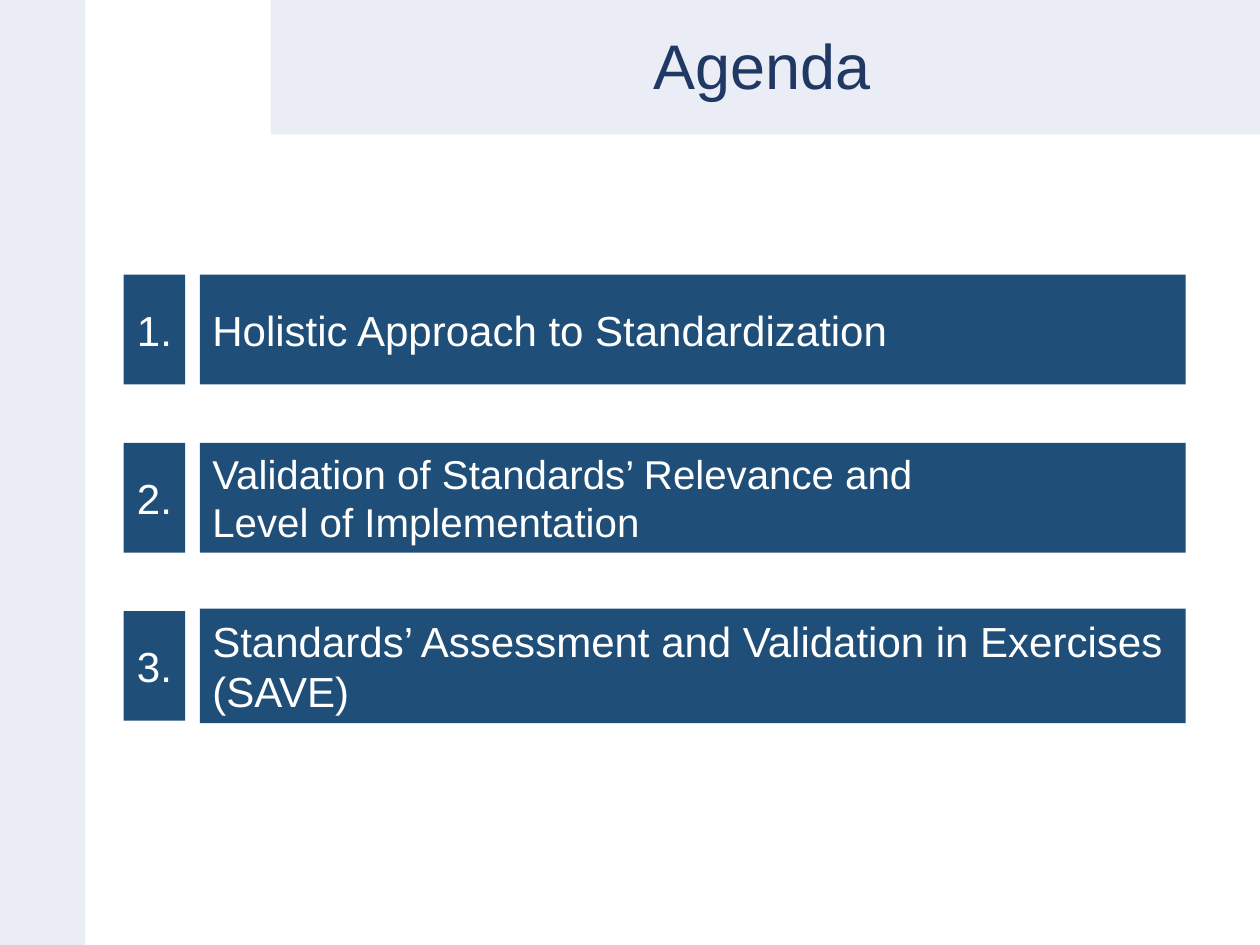
from pptx import Presentation
from pptx.dml.color import RGBColor
from pptx.enum.shapes import MSO_SHAPE as Shape
from pptx.enum.text import MSO_ANCHOR as Anchor, PP_ALIGN as Align
from pptx.util import Pt

PALE, NAVY, WHITE, TITLE_BLUE = "EAEDF6", "1F4E79", "FFFFFF", "203864"
FIRST_TOP, ROW_STEP, ROW_HEIGHT = 157, 96.1, 62.7
TOPICS = [
    (["Holistic Approach to Standardization"], 24, ROW_HEIGHT),
    (["Validation of Standards’ Relevance and", "Level of Implementation"], 23, ROW_HEIGHT),
    (["Standards’ Assessment and Validation in Exercises", "(SAVE)"], 24, 65.4),
]


def color(hex_code):
    return RGBColor.from_string(hex_code)


def add_block(slide, left, top, width, height, fill):
    block = slide.shapes.add_shape(
        Shape.RECTANGLE, Pt(left), Pt(top), Pt(width), Pt(height))
    block.shadow.inherit = False
    block.fill.solid()
    block.fill.fore_color.rgb = color(fill)
    block.line.fill.background()
    return block


def write(holder, lines, size, ink, align, spacing=None):
    frame = holder.text_frame
    frame.word_wrap = True
    frame.vertical_anchor = Anchor.MIDDLE
    frame.text = "\n".join(lines)
    for paragraph in frame.paragraphs:
        layout = {"alignment": align, "line_spacing": spacing}
        for name, value in layout.items():
            setattr(paragraph, name, value)
        for name, value in {"name": "Arial", "size": Pt(size)}.items():
            setattr(paragraph.font, name, value)
        paragraph.font.color.rgb = color(ink)


def add_title(slide, text):
    title = slide.shapes.add_textbox(Pt(150.5), Pt(1.4), Pt(569.5), Pt(76.3))
    write(title, [text], 36, TITLE_BLUE, Align.CENTER, 0.9)


def add_agenda_row(slide, number, lines, size, topic_height):
    top = FIRST_TOP + (number - 1) * ROW_STEP
    topic_top = top - (topic_height - ROW_HEIGHT) / 2
    topic = add_block(slide, 114.3, topic_top, 563.3, topic_height, NAVY)
    write(topic, lines, size, WHITE, Align.LEFT)
    badge = add_block(slide, 70.7, top, 35.2, ROW_HEIGHT, NAVY)
    write(badge, [f"{number}."], 24, WHITE, Align.CENTER)


def main():
    deck = Presentation()
    deck.slide_width, deck.slide_height = Pt(720), Pt(540)
    slide = deck.slides.add_slide(deck.slide_layouts[6])
    add_block(slide, 0, 0, 48.7, 540, PALE)
    add_block(slide, 154.8, 0, 565.2, 76.8, PALE)
    for number, (lines, size, height) in enumerate(TOPICS, 1):
        add_agenda_row(slide, number, lines, size, height)
    add_title(slide, "Agenda")
    deck.save("out.pptx")


if __name__ == "__main__":
    main()
